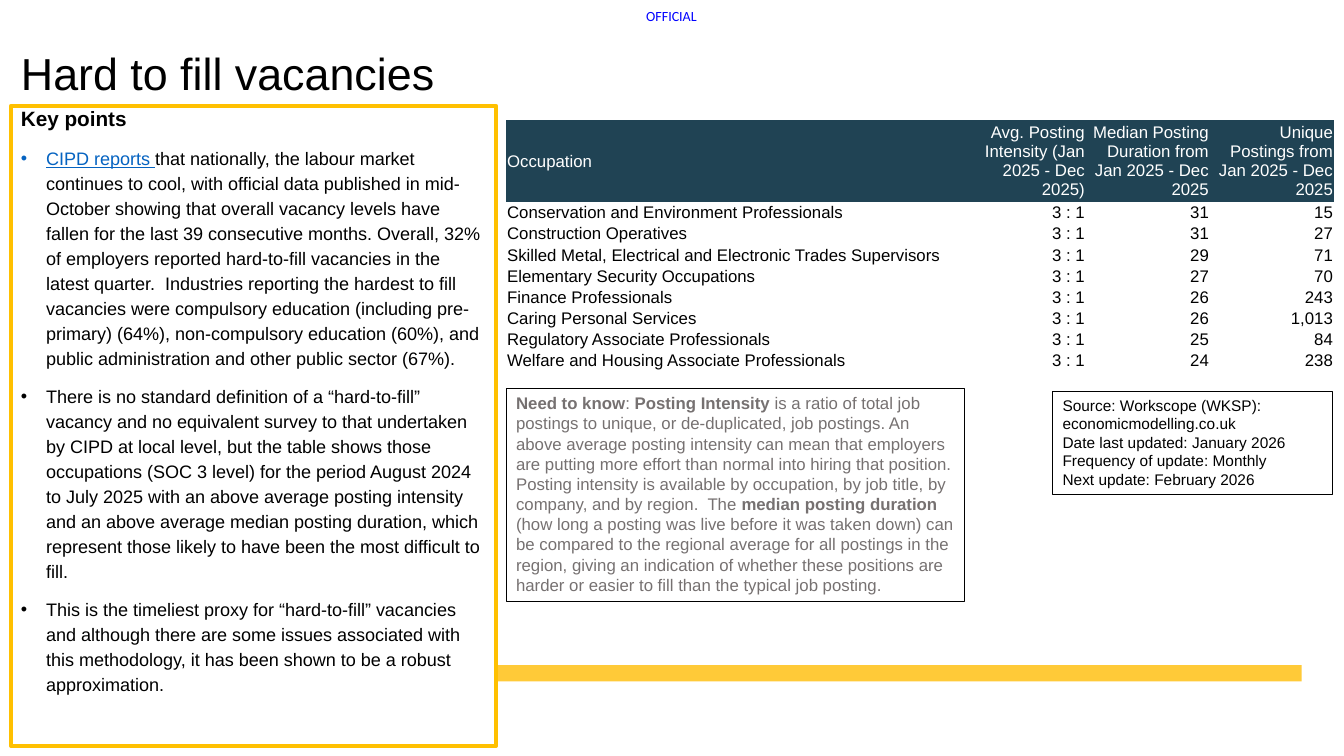
from dataclasses import dataclass

import pptx
import pptx.dml.color
import pptx.enum.shapes
import pptx.enum.text
import pptx.oxml
import pptx.oxml.ns
import pptx.util

Inches = pptx.util.Inches
Pt = pptx.util.Pt
Align = pptx.enum.text.PP_ALIGN
Anchor = pptx.enum.text.MSO_ANCHOR

COLORS = {
    "black": "000000", "white": "FFFFFF", "bar": "FFCA38", "frame": "FFC000",
    "label": "0000FF", "link": "0563C1", "head": "204354", "note": "767171",
}
PLAIN_GRID = "{2D5ABB26-0587-4C30-8999-92F81FD0307C}"


@dataclass
class Run:
    text: str
    size: float
    color: str = "black"
    bold: bool = False
    under: bool = False
    font: str = "Arial"


@dataclass
class Para:
    runs: list[Run]
    line: float = 1.0
    before: float = 0
    bullet: bool = False


@dataclass
class Box:
    left: float
    top: float
    width: float
    height: float
    paras: list[Para]
    fill: str = ""
    edge: str = ""
    weight: float = 0.75
    inset: bool = True
    wrap: bool = True
    middle: bool = False


def rgb(name: str) -> pptx.dml.color.RGBColor:
    return pptx.dml.color.RGBColor.from_string(COLORS[name])


def style(run, look: Run) -> None:
    font = run.font
    font.name, font.size, font.bold = look.font, Pt(look.size), look.bold
    font.color.rgb = rgb(look.color)
    if look.under:
        font.underline = True


def dot(para) -> None:
    """Give the paragraph a round bullet with a hanging indent."""
    props = para._p.get_or_add_pPr()
    props.set("marL", str(Inches(0.25)))
    props.set("indent", str(-Inches(0.25)))
    ns = pptx.oxml.ns.nsdecls("a")
    props.append(pptx.oxml.parse_xml(f'<a:buFont {ns} typeface="Arial"/>'))
    props.append(pptx.oxml.parse_xml(f'<a:buChar {ns} char="•"/>'))


def write(frame, paras: list[Para]) -> None:
    for i, item in enumerate(paras):
        para = frame.paragraphs[0] if i == 0 else frame.add_paragraph()
        if item.bullet:
            dot(para)
        para.alignment = Align.LEFT
        para.line_spacing = item.line
        para.space_before = Pt(item.before)
        for look in item.runs:
            run = para.add_run()
            run.text = look.text
            style(run, look)


def draw(slide, box: Box) -> None:
    place = [Inches(n) for n in (box.left, box.top, box.width, box.height)]
    if box.fill:
        shape = slide.shapes.add_shape(pptx.enum.shapes.MSO_SHAPE.RECTANGLE, *place)
        shape.shadow.inherit = False
        shape.fill.solid()
        shape.fill.fore_color.rgb = rgb(box.fill)
        if box.edge:
            shape.line.color.rgb = rgb(box.edge)
            shape.line.width = Pt(box.weight)
        else:
            shape.line.fill.background()
    else:
        shape = slide.shapes.add_textbox(*place)
    frame = shape.text_frame
    frame.word_wrap = box.wrap
    frame.vertical_anchor = Anchor.MIDDLE if box.middle else Anchor.TOP
    if not box.inset:
        frame.margin_left = frame.margin_right = 0
        frame.margin_top = frame.margin_bottom = 0
    write(frame, box.paras)


def chart_jobs(slide, rows: list[tuple[str, ...]]) -> None:
    """Draw the table of occupations, whose first row is the header."""
    widths = [4.52, 1.23, 1.23, 1.23]
    highs = [0.58] + [0.19] * (len(rows) - 1)
    table = slide.shapes.add_table(
        len(rows), len(widths), Inches(5.02), Inches(1.19),
        Inches(sum(widths)), Inches(sum(highs))).table
    table.first_row = table.horz_banding = False
    table._tbl.tblPr.find(pptx.oxml.ns.qn("a:tableStyleId")).text = PLAIN_GRID
    for col, width in zip(table.columns, widths):
        col.width = Inches(width)
    for r, (row, high) in enumerate(zip(rows, highs)):
        table.rows[r].height = Inches(high)
        for c, text in enumerate(row):
            cell = table.cell(r, c)
            cell.margin_left = cell.margin_right = cell.margin_top = Inches(0.01)
            cell.margin_bottom = 0
            cell.vertical_anchor = Anchor.MIDDLE
            if r == 0:
                cell.fill.solid()
                cell.fill.fore_color.rgb = rgb("head")
            else:
                cell.fill.background()
            para = cell.text_frame.paragraphs[0]
            para.text = text
            para.alignment = Align.RIGHT if c else Align.LEFT
            style(para.runs[0], Run(text, 12, "black" if r else "white"))


def point(*runs: Run) -> Para:
    return Para(list(runs), line=1.15, before=10, bullet=True)


def note(text: str, bold: bool = False) -> Run:
    return Run(text, 12, "note", bold)


BODY = 12.9
POINTS = [
    Para([Run("Key points", 14.8, bold=True)], line=0.8),
    point(
        Run("CIPD reports ", BODY, "link", under=True),
        Run("that nationally, the labour market continues to cool, with official data "
            "published in mid-October showing that overall vacancy levels have fallen for "
            "the last 39 consecutive months. Overall, 32% of employers reported hard-to-fill "
            "vacancies in the latest quarter.  Industries reporting the hardest to fill "
            "vacancies were compulsory education (including pre-primary) (64%), "
            "non-compulsory education (60%), and public administration and other public "
            "sector (67%).", BODY)),
    point(Run(
        "There is no standard definition of a “hard-to-fill” vacancy and no equivalent "
        "survey to that undertaken by CIPD at local level, but the table shows those "
        "occupations (SOC 3 level) for the period August 2024 to July 2025 with an above "
        "average posting intensity and an above average median posting duration, which "
        "represent those likely to have been the most difficult to fill.", BODY)),
    point(Run(
        "This is the timeliest proxy for “hard-to-fill” vacancies and although there are "
        "some issues associated with this methodology, it has been shown to be a robust "
        "approximation.", BODY)),
]
SOURCE = [
    "Source: Workscope (WKSP): economicmodelling.co.uk",
    "Date last updated: January 2026",
    "Frequency of update: Monthly",
    "Next update: February 2026",
]
NEED = [
    note("Need to know", True),
    note(": "),
    note("Posting Intensity ", True),
    note("is a ratio of total job postings to unique, or de-duplicated, job postings. An "
         "above average posting intensity can mean that employers are putting more effort "
         "than normal into hiring that position. Posting intensity is available by "
         "occupation, by job title, by company, and by region.  The "),
    note("median posting duration ", True),
    note("(how long a posting was live before it was taken down) can be compared to the "
         "regional average for all postings in the region, giving an indication of whether "
         "these positions are harder or easier to fill than the typical job posting."),
]
JOBS = [
    ("Occupation", "Avg. Posting Intensity (Jan 2025 - Dec 2025)",
     "Median Posting Duration from Jan 2025 - Dec 2025",
     "Unique Postings from Jan 2025 - Dec 2025"),
    ("Conservation and Environment Professionals", "3 : 1", "31", "15"),
    ("Construction Operatives", "3 : 1", "31", "27"),
    ("Skilled Metal, Electrical and Electronic Trades Supervisors", "3 : 1", "29", "71"),
    ("Elementary Security Occupations", "3 : 1", "27", "70"),
    ("Finance Professionals", "3 : 1", "26", "243"),
    ("Caring Personal Services", "3 : 1", "26", "1,013"),
    ("Regulatory Associate Professionals", "3 : 1", "25", "84"),
    ("Welfare and Housing Associate Professionals", "3 : 1", "24", "238"),
]
BOXES = [
    Box(0.31, 6.6, 12.6, 0.16, [], fill="bar"),
    Box(6.41, 0.07, 0.53, 0.17, [Para([Run("OFFICIAL", 10, "label", font="Calibri")])],
        inset=False, wrap=False),
    Box(0.11, 0.32, 12.6, 0.87, [Para([Run("Hard to fill vacancies", 32)], line=0.9)],
        middle=True),
    Box(0.11, 1.05, 4.81, 6.35, POINTS, "white", "frame", 3),
    Box(10.44, 3.88, 2.78, 1.03, [Para([Run(line, 11)]) for line in SOURCE],
        "white", "black"),
    Box(5.02, 3.85, 4.55, 2.12, [Para(NEED)], "white", "black"),
]


def main() -> None:
    deck = pptx.Presentation()
    deck.slide_width, deck.slide_height = Inches(13.33), Inches(7.5)
    slide = deck.slides.add_slide(deck.slide_layouts[6])
    for box in BOXES:
        draw(slide, box)
    chart_jobs(slide, JOBS)
    deck.save("out.pptx")


if __name__ == "__main__":
    main()
